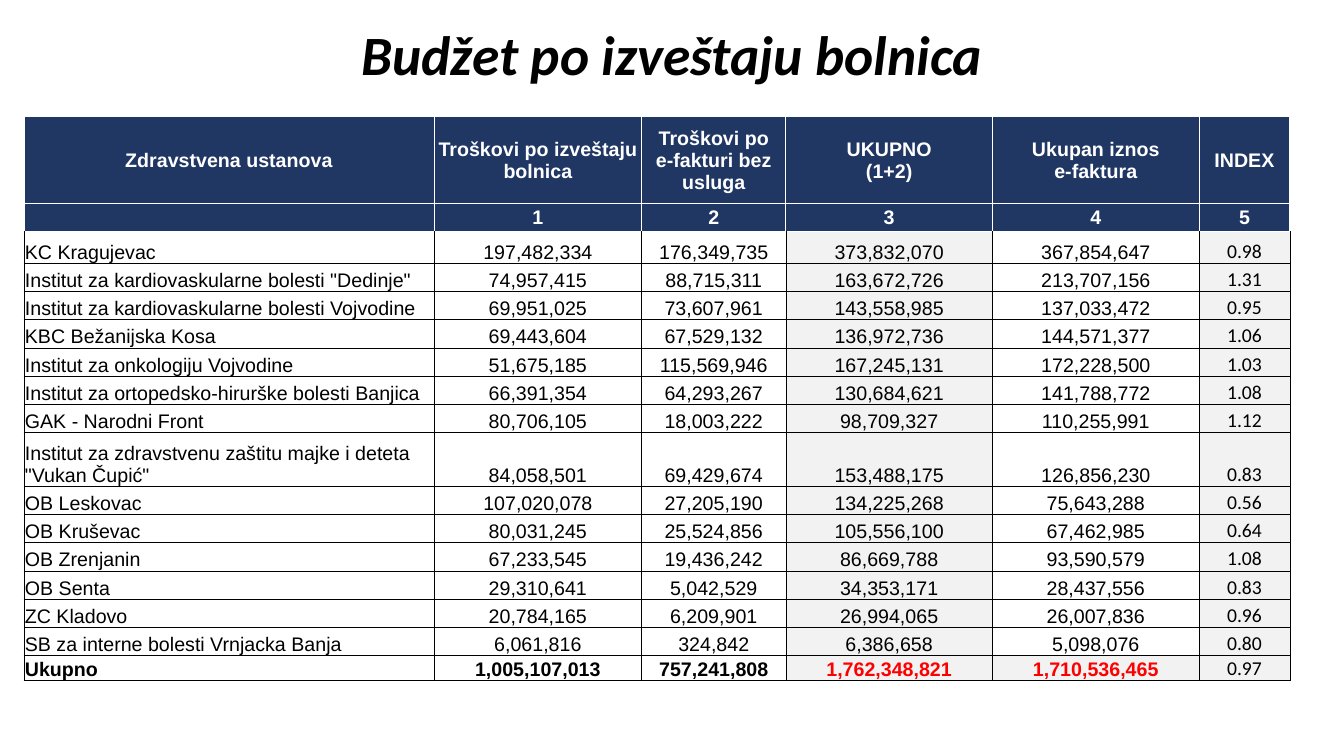
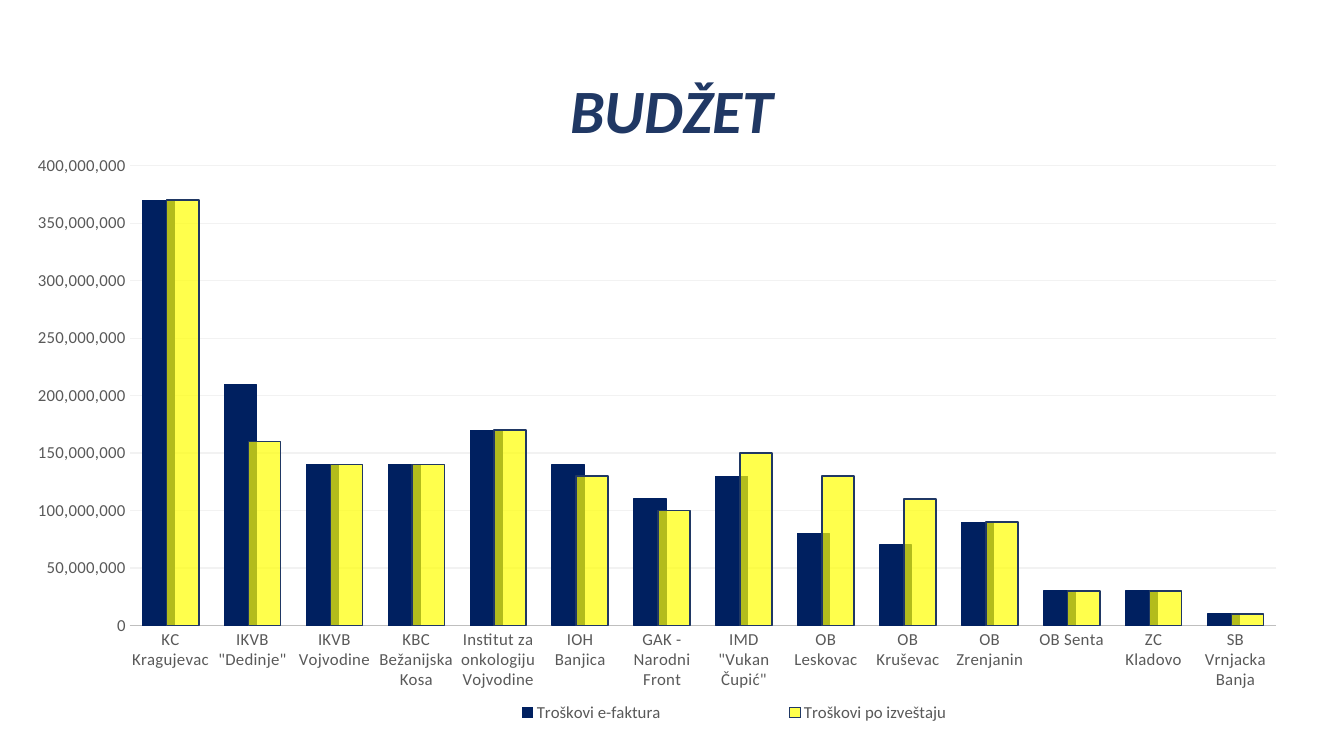
from dataclasses import dataclass

import lxml.etree
import pptx
import pptx.chart.chart
import pptx.chart.data
import pptx.chart.series
import pptx.dml.color
import pptx.enum.chart
import pptx.enum.text
import pptx.oxml.ns
import pptx.slide
import pptx.table
import pptx.text.text
import pptx.util

Pt = pptx.util.Pt
RGBColor = pptx.dml.color.RGBColor
Align = pptx.enum.text.PP_ALIGN
Anchor = pptx.enum.text.MSO_ANCHOR
tag = pptx.oxml.ns.qn

BLACK = RGBColor(0x00, 0x00, 0x00)
WHITE = RGBColor(0xFF, 0xFF, 0xFF)
RED = RGBColor(0xFF, 0x00, 0x00)
YELLOW = RGBColor(0xFF, 0xFF, 0x00)
HEAD = RGBColor(0x20, 0x37, 0x64)
NAVY = RGBColor(0x20, 0x38, 0x64)
DEEP = RGBColor(0x00, 0x20, 0x60)
PALE = RGBColor(0xF2, 0xF2, 0xF2)
SILVER = RGBColor(0xBF, 0xBF, 0xBF)
GRAY = RGBColor(0x59, 0x59, 0x59)
SANS = "Calibri"
ARIAL = "Arial"


@dataclass(frozen=True)
class Box:
    left: float
    top: float
    width: float
    height: float

    def place(self) -> list[int]:
        return [Pt(n) for n in (self.left, self.top, self.width, self.height)]


@dataclass(frozen=True)
class Column:
    head: str
    width: float


@dataclass(frozen=True)
class Clinic:
    name: str
    label: str
    report: int
    extra: int
    total: int
    bill: int
    height: float = 20.2

    def texts(self) -> list[str]:
        sums = (self.report, self.extra, self.total, self.bill)
        return [self.name, *(f"{n:,}" for n in sums), f"{self.bill / self.total:.2f}"]


@dataclass(frozen=True)
class Look:
    fill: RGBColor = WHITE
    color: RGBColor = BLACK
    font: str = ARIAL
    bold: bool = False
    align: Align = Align.CENTER
    anchor: Anchor = Anchor.BOTTOM
    line: RGBColor = BLACK
    top: RGBColor = BLACK


@dataclass(frozen=True)
class Bar:
    name: str
    field: str
    fill: RGBColor
    line: RGBColor
    width: float
    alpha: int


COLUMNS = [
    Column("Zdravstvena ustanova", 293),
    Column("Troškovi po izveštaju bolnica", 148.3),
    Column("Troškovi po\ne-fakturi bez usluga", 103),
    Column("UKUPNO\n(1+2)", 147.6),
    Column("Ukupan iznos\ne-faktura", 147.6),
    Column("INDEX", 64.8),
]
CLINICS = [
    Clinic("KC Kragujevac", "KC Kragujevac", 197482334, 176349735, 373832070, 367854647, 22.5),
    Clinic('Institut za kardiovaskularne bolesti "Dedinje"', 'IKVB "Dedinje"',
           74957415, 88715311, 163672726, 213707156),
    Clinic("Institut za kardiovaskularne bolesti Vojvodine", "IKVB Vojvodine",
           69951025, 73607961, 143558985, 137033472),
    Clinic("KBC Bežanijska Kosa", "KBC Bežanijska Kosa",
           69443604, 67529132, 136972736, 144571377),
    Clinic("Institut za onkologiju Vojvodine", "Institut za onkologiju Vojvodine",
           51675185, 115569946, 167245131, 172228500),
    Clinic("Institut za ortopedsko-hirurške bolesti Banjica", "IOH Banjica",
           66391354, 64293267, 130684621, 141788772),
    Clinic("GAK - Narodni Front", "GAK - Narodni Front",
           80706105, 18003222, 98709327, 110255991),
    Clinic('Institut za zdravstvenu zaštitu majke i deteta "Vukan Čupić"',
           'IMD "Vukan Čupić"', 84058501, 69429674, 153488175, 126856230, 38.2),
    Clinic("OB Leskovac", "OB Leskovac", 107020078, 27205190, 134225268, 75643288),
    Clinic("OB Kruševac", "OB Kruševac", 80031245, 25524856, 105556100, 67462985),
    Clinic("OB Zrenjanin", "OB Zrenjanin", 67233545, 19436242, 86669788, 93590579),
    Clinic("OB Senta", "OB Senta", 29310641, 5042529, 34353171, 28437556),
    Clinic("ZC Kladovo", "ZC Kladovo", 20784165, 6209901, 26994065, 26007836),
    Clinic("SB za interne bolesti Vrnjacka Banja", "SB Vrnjacka Banja",
           6061816, 324842, 6386658, 5098076),
]
SUM = Clinic("Ukupno", "Ukupno", 1005107013, 757241808, 1762348821, 1710536465, 16.6)
BARS = [
    Bar("Troškovi e-faktura", "bill", DEEP, DEEP, 0.75, 100),
    Bar("Troškovi po izveštaju", "total", YELLOW, NAVY, 1.25, 70),
]
HEADING = Look(HEAD, WHITE, bold=True, anchor=Anchor.MIDDLE, line=WHITE, top=WHITE)


def style(font: pptx.text.text.Font, size: float, color: RGBColor,
          face: str = SANS, bold: bool = False, slant: bool = False) -> None:
    font.name = face
    font.size = Pt(size)
    font.bold = bold
    font.italic = slant
    font.color.rgb = color


def add_slide(deck, text: str, box: Box, size: float,
              color: RGBColor) -> pptx.slide.Slide:
    slide = deck.slides.add_slide(deck.slide_layouts[5])
    title = slide.shapes.title
    title.left, title.top, title.width, title.height = box.place()
    frame = title.text_frame
    frame.text = text
    frame.vertical_anchor = Anchor.MIDDLE
    frame.auto_size = pptx.enum.text.MSO_AUTO_SIZE.NONE
    para = frame.paragraphs[0]
    para.alignment = Align.CENTER
    para.line_spacing = 0.9
    style(para.font, size, color, bold=True, slant=True)
    return slide


def add_edge(cell: pptx.table._Cell, side: str, color: RGBColor) -> None:
    width = Pt(1 if color == WHITE else 0.5)
    line = lxml.etree.SubElement(cell._tc.get_or_add_tcPr(), tag(f"a:ln{side}"), w=str(width))
    fill = lxml.etree.SubElement(line, tag("a:solidFill"))
    lxml.etree.SubElement(fill, tag("a:srgbClr"), val=str(color))


def fill_cell(cell: pptx.table._Cell, text: str, look: Look) -> None:
    cell.text = text
    cell.vertical_anchor = look.anchor
    cell.margin_left = cell.margin_right = cell.margin_top = Pt(0.7)
    cell.margin_bottom = Pt(0)
    for side in "LRTB":
        add_edge(cell, side, look.top if side == "T" else look.line)
    cell.fill.solid()
    cell.fill.fore_color.rgb = look.fill
    for para in cell.text_frame.paragraphs:
        para.alignment = look.align
        style(para.font, 14, look.color, look.font, look.bold)


def body_look(clinic: Clinic, col: int) -> Look:
    final = clinic is SUM
    index = col == 5
    return Look(
        fill=PALE if col in (3, 5) or final and col == 4 else WHITE,
        color=RED if final and col in (3, 4) else BLACK,
        font=SANS if index else ARIAL,
        bold=final and not index,
        align=Align.CENTER if col else Align.LEFT,
        top=WHITE if clinic is CLINICS[0] else BLACK,
    )


def add_costs(slide: pptx.slide.Slide) -> None:
    clinics = [*CLINICS, SUM]
    heights = [62.6, 20.2, *(c.height for c in clinics)]
    box = Box(17.1, 82.8, sum(c.width for c in COLUMNS), sum(heights))
    table = slide.shapes.add_table(len(heights), len(COLUMNS), *box.place()).table
    table.first_row = table.horz_banding = False
    for row, height in zip(table.rows, heights):
        row.height = Pt(height)
    for col, item in enumerate(COLUMNS):
        table.columns[col].width = Pt(item.width)
        fill_cell(table.cell(0, col), item.head, HEADING)
        fill_cell(table.cell(1, col), str(col) if col else "", HEADING)
    for row, clinic in enumerate(clinics, 2):
        for col, text in enumerate(clinic.texts()):
            fill_cell(table.cell(row, col), text, body_look(clinic, col))


def paint_bar(series: pptx.chart.series.BarSeries, bar: Bar) -> None:
    shape = series.format
    series.invert_if_negative = False
    shape.fill.solid()
    shape.fill.fore_color.rgb = bar.fill
    shape.line.color.rgb = bar.line
    shape.line.width = Pt(bar.width)
    if bar.alpha < 100:
        color = shape.fill._xPr.find(f"{tag('a:solidFill')}/{tag('a:srgbClr')}")
        lxml.etree.SubElement(color, tag("a:alpha"), val=str(bar.alpha * 1000))


def add_legend(chart: pptx.chart.chart.Chart) -> None:
    chart.has_legend = True
    legend = chart.legend
    legend.position = pptx.enum.chart.XL_LEGEND_POSITION.BOTTOM
    legend.include_in_layout = False
    style(legend.font, 12, GRAY)
    layout = legend._element.find(tag("c:layout"))
    if layout is None:
        layout = lxml.etree.Element(tag("c:layout"))
        legend._element.find(tag("c:legendPos")).addnext(layout)
    manual = lxml.etree.SubElement(layout, tag("c:manualLayout"))
    spots = {"xMode": "edge", "yMode": "edge", "x": 0.3, "y": 0.93, "w": 0.52, "h": 0.06}
    for key, val in spots.items():
        lxml.etree.SubElement(manual, tag(f"c:{key}"), val=str(val))


def add_bars(slide: pptx.slide.Slide, box: Box) -> None:
    data = pptx.chart.data.CategoryChartData(number_format="#,##0")
    data.categories = [c.label for c in CLINICS]
    for bar in BARS:
        data.add_series(bar.name, [round(getattr(c, bar.field), -7) for c in CLINICS])
    kind = pptx.enum.chart.XL_CHART_TYPE.COLUMN_CLUSTERED
    chart = slide.shapes.add_chart(kind, *box.place(), data).chart
    chart.has_title = False
    style(chart.font, 10, BLACK)
    plot = chart.plots[0]
    plot.gap_width = 80
    plot.overlap = 25
    plot.vary_by_categories = False
    for series, bar in zip(plot.series, BARS):
        paint_bar(series, bar)

    cats, vals = chart.category_axis, chart.value_axis
    for axis in (cats, vals):
        axis.major_tick_mark = axis.minor_tick_mark = pptx.enum.chart.XL_TICK_MARK.NONE
        font = axis.tick_labels.font
        style(font, 12, GRAY)
        font._rPr.set("spc", "20")
    cats.format.line.color.rgb = SILVER
    cats.format.line.width = Pt(1.25)
    vals.format.line.fill.background()
    vals.minimum_scale = 0
    vals.maximum_scale = 400_000_000
    vals.major_unit = 50_000_000
    vals.tick_labels.number_format = "#,##0"
    vals.tick_labels.number_format_is_linked = False
    grid = vals.major_gridlines.format.line
    grid.color.rgb = PALE
    grid.width = Pt(0.75)
    add_legend(chart)


def main() -> None:
    deck = pptx.Presentation()
    deck.slide_width, deck.slide_height = Pt(960), Pt(540)
    add_costs(add_slide(deck, "Budžet po izveštaju bolnica", Box(66, 18, 828, 46), 39.6, BLACK))
    slide = add_slide(deck, "BUDŽET", Box(66, 28.8, 828, 104.4), 44, NAVY)
    slide.shapes.title.fill.solid()
    slide.shapes.title.fill.fore_color.rgb = WHITE
    add_bars(slide, Box(8.6, 102.7, 921.6, 423.4))
    deck.save("out.pptx")


if __name__ == "__main__":
    main()
